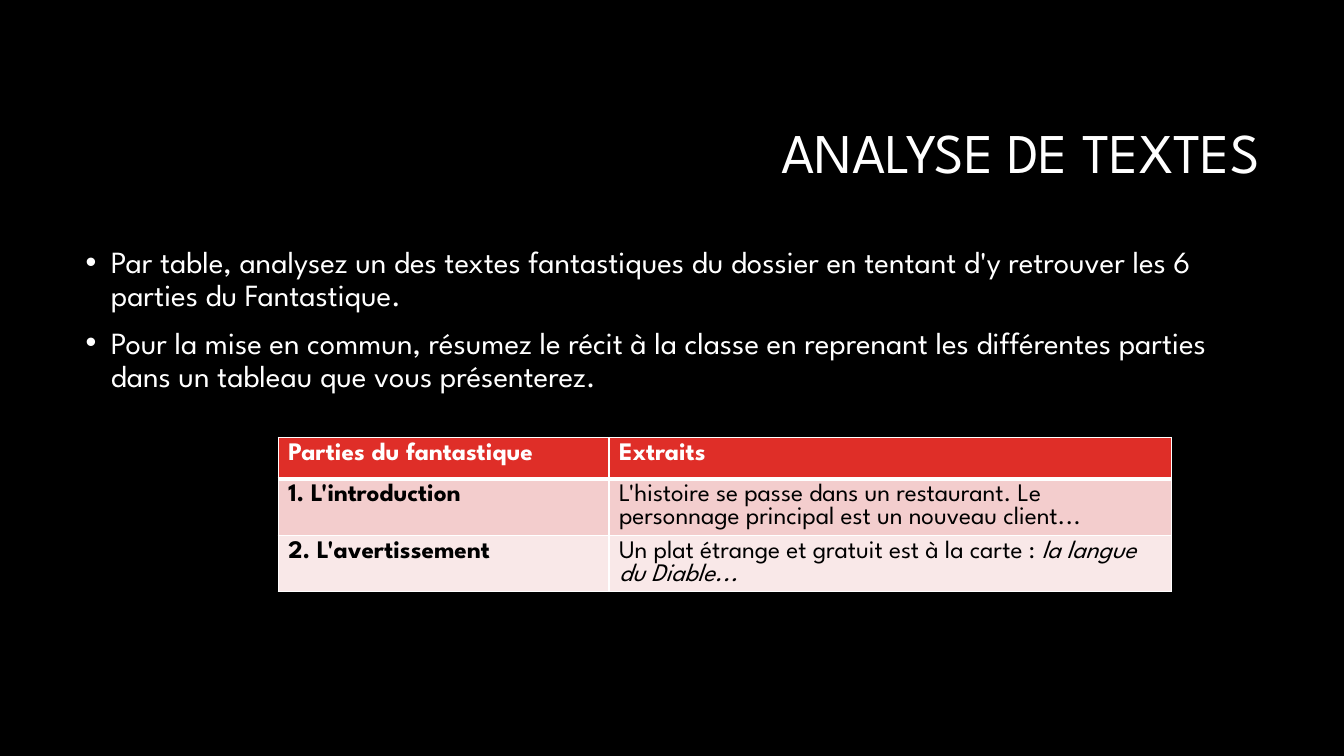
from lxml import etree
from pptx import Presentation
from pptx.dml.color import RGBColor
from pptx.enum import text
from pptx.oxml.ns import qn
from pptx.util import Inches, Pt

FONT = "League Spartan"
BLACK = RGBColor(0x00, 0x00, 0x00)
WHITE = RGBColor(0xFF, 0xFF, 0xFF)
RED = RGBColor(0xDF, 0x2E, 0x28)
ROSE = RGBColor(0xF3, 0xCD, 0xCD)
PALE_ROSE = RGBColor(0xF9, 0xE8, 0xE8)

TITLE = "ANALYSE DE TEXTES"
INSTRUCTIONS = [
    "Par table, analysez un des textes fantastiques du dossier en tentant d'y "
    "retrouver les 6 parties du Fantastique.",
    "Pour la mise en commun, résumez le récit à la classe en reprenant les "
    "différentes parties dans un tableau que vous présenterez.",
]
COLUMN_WIDTHS = [3.28, 5.58]
ROW_HEIGHT = 0.41
ROW_FILLS = [RED, ROSE, PALE_ROSE]
# Each cell is a list of (text, format) runs.
BOLD, PLAIN, ITALIC = {"bold": True}, {"bold": False}, {"bold": False, "italic": True}
ROWS = [
    [[("Parties du fantastique", BOLD)], [("Extraits", BOLD)]],
    [[("1. L'introduction", BOLD)],
     [("L'histoire se passe dans un restaurant. Le personnage principal est "
       "un nouveau client...", PLAIN)]],
    [[("2. L'avertissement", BOLD)],
     [("Un plat étrange et gratuit est à la carte : ", PLAIN),
      ("la langue du Diable...", ITALIC)]],
]


def set_attrs(obj, values):
    for name, value in values.items():
        setattr(obj, name, value)


def format_font(font, size, color, **values):
    set_attrs(font, {"name": FONT, "size": Pt(size), **values})
    font.color.rgb = color


def place(sp, left, top, width, height):
    set_attrs(sp, {"left": Inches(left), "top": Inches(top),
                   "width": Inches(width), "height": Inches(height)})


def add_bullet(p):
    pPr = p._p.get_or_add_pPr()
    pPr.set("marL", str(Inches(0.25)))
    pPr.set("indent", str(-Inches(0.25)))
    etree.SubElement(pPr, qn("a:buFont")).set("typeface", "Arial")
    etree.SubElement(pPr, qn("a:buChar")).set("char", "•")


def fill_title(sp):
    place(sp, 3.17, 0.84, 9.42, 1.41)
    tf = sp.text_frame
    set_attrs(tf, {"text": TITLE, "word_wrap": True,
                   "auto_size": text.MSO_AUTO_SIZE.NONE,
                   "vertical_anchor": text.MSO_ANCHOR.MIDDLE})
    p = tf.paragraphs[0]
    set_attrs(p, {"alignment": text.PP_ALIGN.RIGHT, "line_spacing": 0.9})
    format_font(p.runs[0].font, 40, WHITE)


def fill_body(sp):
    place(sp, 0.75, 2.4, 11.83, 4.4)
    tf = sp.text_frame
    set_attrs(tf, {"text": "\n".join(INSTRUCTIONS), "word_wrap": True,
                   "auto_size": text.MSO_AUTO_SIZE.NONE,
                   "vertical_anchor": text.MSO_ANCHOR.TOP})
    for i, p in enumerate(tf.paragraphs):
        add_bullet(p)
        set_attrs(p, {"line_spacing": 0.9, "space_before": Pt(10 if i else 0)})
        format_font(p.runs[0].font, 22, WHITE)


def add_borders(cell, widths):
    """Draw white borders; widths maps a:lnL, a:lnR, a:lnT and a:lnB to points."""
    tcPr = cell._tc.get_or_add_tcPr()
    for i, (tag, width) in enumerate(widths.items()):
        ln = etree.Element(qn(tag), w=str(Pt(width)))
        fill = etree.SubElement(ln, qn("a:solidFill"))
        etree.SubElement(fill, qn("a:srgbClr")).set("val", str(WHITE))
        tcPr.insert(i, ln)


def add_parts_table(slide):
    frame = slide.shapes.add_table(
        len(ROWS), len(COLUMN_WIDTHS), Inches(2.76), Inches(4.34),
        Inches(sum(COLUMN_WIDTHS)), Inches(ROW_HEIGHT * len(ROWS)))
    table = frame.table
    for column, width in zip(table.columns, COLUMN_WIDTHS):
        column.width = Inches(width)
    for r, (row, fill) in enumerate(zip(ROWS, ROW_FILLS)):
        table.rows[r].height = Inches(ROW_HEIGHT)
        for c, runs in enumerate(row):
            cell = table.cell(r, c)
            cell.fill.solid()
            cell.fill.fore_color.rgb = fill
            add_borders(cell, {"a:lnL": 1, "a:lnR": 1,
                               "a:lnT": 3 if r == 1 else 1,
                               "a:lnB": 3 if r == 0 else 1})
            p = cell.text_frame.paragraphs[0]
            for words, style in runs:
                run = p.add_run()
                run.text = words
                format_font(run.font, 18, BLACK if r else WHITE, **style)


def main():
    prs = Presentation()
    set_attrs(prs, {"slide_width": Inches(13.33), "slide_height": Inches(7.5)})
    slide = prs.slides.add_slide(prs.slide_layouts[1])
    slide.background.fill.solid()
    slide.background.fill.fore_color.rgb = BLACK
    fill_title(slide.shapes.title)
    fill_body(slide.placeholders[1])
    add_parts_table(slide)
    prs.save("out.pptx")


if __name__ == "__main__":
    main()
